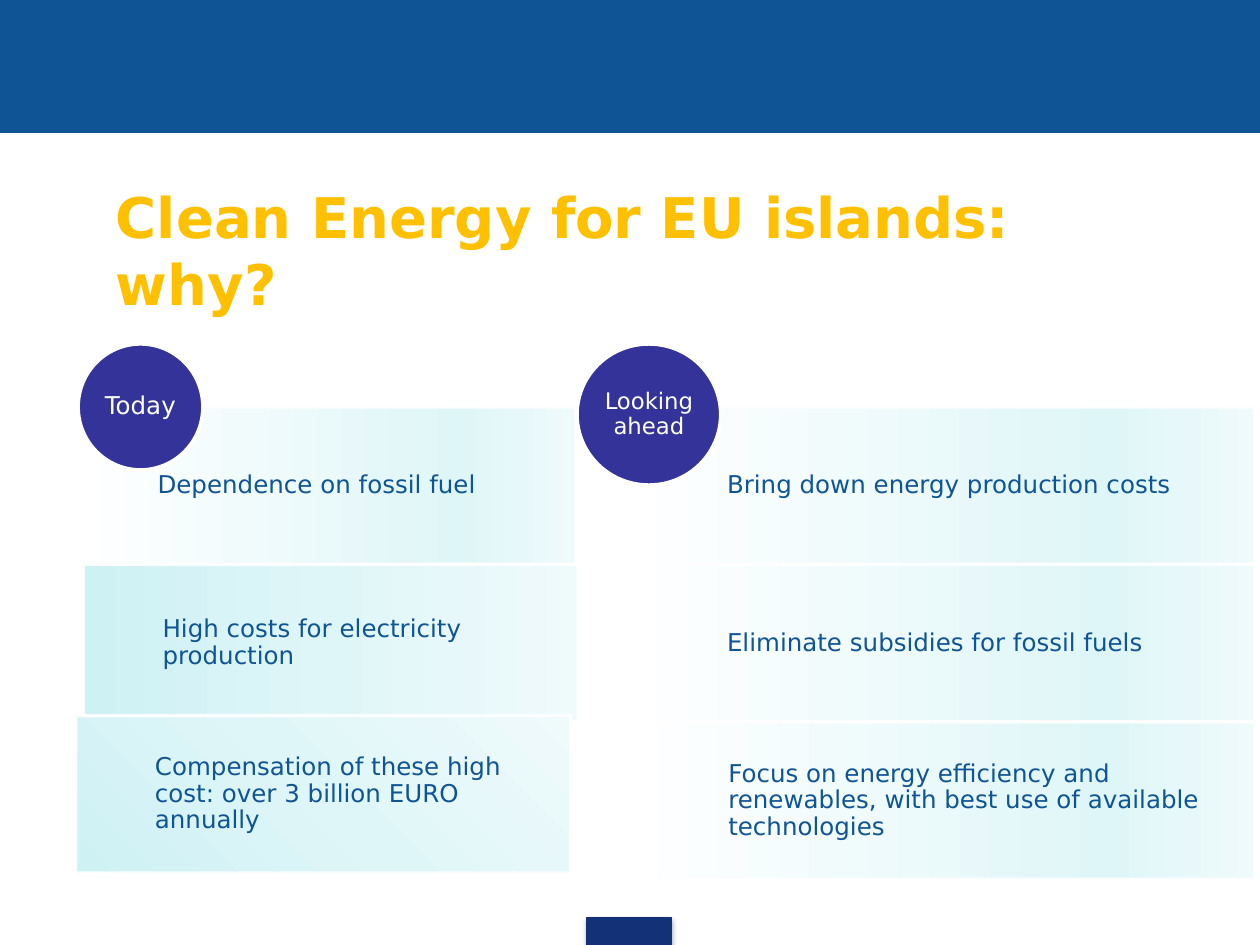
from lxml import etree
from pptx import Presentation
from pptx.dml.color import RGBColor
from pptx.enum import shapes, text
from pptx.oxml import parse_xml
from pptx.oxml.ns import nsdecls, qn
from pptx.util import Inches, Pt

FONT = "DejaVu Sans"
C = {"blue": "0F5494", "navy": "133176", "gold": "FFC000",
     "violet": "333399", "white": "FFFFFF"}
FADE = [(0, "FFFFFF"), (77, "DFF6F8"), (100, "EFFAFB")]
TINT = [(0, "CEF1F4"), (50, "DFF6F8"), (100, "EFFAFB")]

TITLE = "Clean Energy for EU islands: why?"
# Panels: text, left, top, width, gradient stops, clockwise angle
COLUMNS = [
    {"head": "Today", "size": 14, "circle": (0.62, 2.73, 0.99, 1), "indent": 0.63,
     "panels": [
         ("Dependence on fossil fuel", 0.62, 3.23, 3.95, FADE, 0),
         ("High costs for electricity production", 0.66, 4.48, 3.93, TINT, 0),
         ("Compensation of these high cost: over 3 billion EURO annually",
          0.6, 5.68, 3.93, TINT, 315)]},
    {"head": "Looking ahead", "size": 13, "circle": (4.58, 2.73, 1.14, 1.12), "indent": 0.8,
     "panels": [
         ("Bring down energy production costs", 4.97, 3.23, 4.99, FADE, 0),
         ("Eliminate subsidies for fossil fuels", 4.97, 4.48, 4.99, FADE, 0),
         ("Focus on energy efficiency and renewables, with best use of available technologies",
          4.98, 5.73, 4.98, FADE, 0)]},
]
PANEL_H = 1.25
PAD = 0.11


def rgb(name):
    return RGBColor.from_string(C[name])


def add_box(s, kind, box, fill, line, width):
    sp = s.shapes.add_shape(kind, *map(Inches, box))
    sp.shadow.inherit = False
    sp.fill.solid()
    sp.fill.fore_color.rgb = rgb(fill)
    sp.line.color.rgb = rgb(line)
    sp.line.width = Pt(width)
    return sp


def set_gradient(sp, stops, angle):
    gs = "".join(f'<a:gs pos="{pos * 1000}"><a:srgbClr val="{color}"/></a:gs>'
                 for pos, color in stops)
    grad = parse_xml(f'<a:gradFill {nsdecls("a")} rotWithShape="1"><a:gsLst>{gs}</a:gsLst>'
                     f'<a:lin ang="{angle * 60000}" scaled="0"/></a:gradFill>')
    spPr = sp.fill._xPr
    spPr.replace(spPr.find(qn("a:solidFill")), grad)
    edge = spPr.find(qn("a:ln")).find(".//" + qn("a:srgbClr"))
    etree.SubElement(edge, qn("a:alpha"), val="90000")


def add_run(p, words, size, color, bold=False):
    r = p.add_run()
    r.text = words
    r.font.name, r.font.size, r.font.bold = FONT, Pt(size), bold
    r.font.color.rgb = rgb(color)


def add_label(s, box, words, size, color, align, margins):
    tf = s.shapes.add_textbox(*map(Inches, box)).text_frame
    tf.word_wrap = True
    tf.vertical_anchor = text.MSO_ANCHOR.MIDDLE
    tf.margin_left, tf.margin_top, tf.margin_right, tf.margin_bottom = map(Inches, margins)
    p = tf.paragraphs[0]
    p.alignment = align
    p.line_spacing = 0.9
    add_run(p, words, size, color)


prs = Presentation()
prs.slide_width, prs.slide_height = Inches(10), Inches(7.5)
s = prs.slides.add_slide(prs.slide_layouts[5])
RECT, OVAL = shapes.MSO_SHAPE.RECTANGLE, shapes.MSO_SHAPE.OVAL

# Header band and footer tab
add_box(s, RECT, (0, 0, 10, 1.05), "blue", "blue", 0.75)
tab = add_box(s, RECT, (4.66, 7.28, 0.67, 0.22), "navy", "navy", 0.75)
tab_effects = tab.fill._xPr.find(qn("a:effectLst"))
tab_effects.append(parse_xml(
    f'<a:outerShdw {nsdecls("a")} blurRad="{Pt(3.1)}" dist="{Pt(1.8)}" dir="5400000" '
    'rotWithShape="0"><a:srgbClr val="000000"><a:alpha val="35000"/></a:srgbClr></a:outerShdw>'))

# Title
title = s.shapes.title
title.left, title.top, title.width, title.height = map(Inches, (0.43, 1.47, 9, 1.02))
tf = title.text_frame
tf.word_wrap = True
tf.auto_size = text.MSO_AUTO_SIZE.NONE
tf.vertical_anchor = text.MSO_ANCHOR.MIDDLE
p = tf.paragraphs[0]
p.alignment = text.PP_ALIGN.LEFT
pPr = p._p.get_or_add_pPr()
pPr.set("marL", str(Inches(0.39)))
pPr.set("indent", "0")
add_run(p, TITLE, 32, "gold", bold=True)

# Two columns: panels first, then the heading circle on top
for col in COLUMNS:
    for words, x, y, w, stops, angle in col["panels"]:
        panel = add_box(s, RECT, (x, y, w, PANEL_H), "white", "white", 2)
        set_gradient(panel, stops, angle)
        add_label(s, (x + col["indent"], y, w - col["indent"], PANEL_H), words, 14, "blue",
                  text.PP_ALIGN.LEFT, (0, PAD, PAD, PAD))
    x, y, w, h = col["circle"]
    add_box(s, OVAL, col["circle"], "violet", "white", 2)
    # The label fills the square inscribed in the circle
    add_label(s, (x + 0.146 * w, y + 0.146 * h, 0.707 * w, 0.707 * h), col["head"],
              col["size"], "white", text.PP_ALIGN.CENTER, (0, 0, 0, 0))

prs.save("out.pptx")
